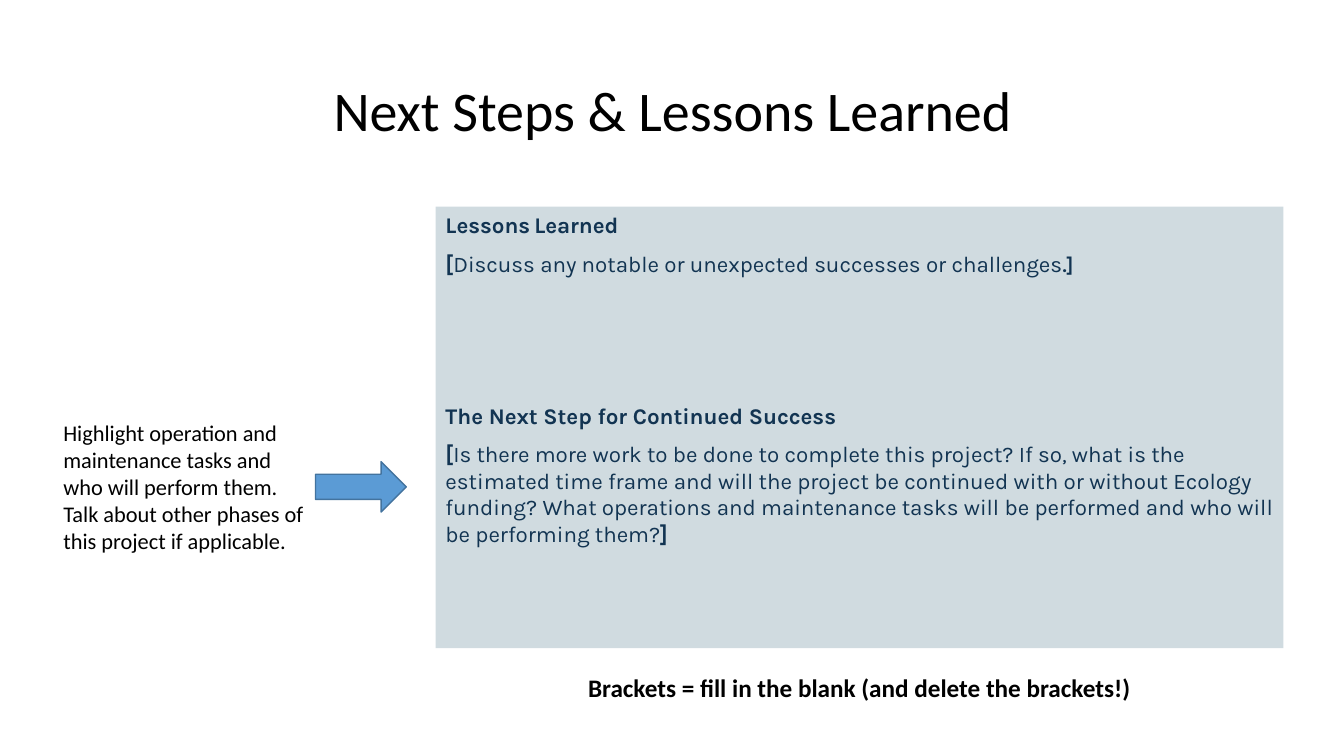
from pptx import Presentation
from pptx.dml.color import RGBColor
from pptx.enum.shapes import MSO_SHAPE as Shape
from pptx.enum.text import MSO_ANCHOR as Anchor, PP_ALIGN as Align
from pptx.util import Inches, Pt

BLACK, NAVY, PANEL = "000000", "123452", "D0DBE0"
ARROW_FILL, ARROW_LINE = "5B9BD5", "43739E"


def color(hex_code):
    return RGBColor.from_string(hex_code)


def write(para, text, size=16, font="Calibri", ink=BLACK, bold=False):
    span = para.add_run()
    span.text = text
    span.font.size = Pt(size)
    span.font.name = font
    span.font.bold = bold
    span.font.color.rgb = color(ink)


def place(shape, box):
    shape.left, shape.top, shape.width, shape.height = map(Inches, box)


def add_block(page, kind, box, fill, line=None):
    shape = page.shapes.add_shape(kind, *map(Inches, box))
    shape.shadow.inherit = False
    shape.fill.solid()
    shape.fill.fore_color.rgb = color(fill)
    if line:
        shape.line.color.rgb = color(line)
        shape.line.width = Pt(1)
    else:
        shape.line.fill.background()
    return shape


def add_title(page, box, text):
    title = page.shapes.title
    place(title, box)
    title.text_frame.vertical_anchor = Anchor.MIDDLE
    para = title.text_frame.paragraphs[0]
    para.alignment = Align.CENTER
    para.line_spacing = 0.9
    write(para, text, size=40)


def add_panel(page, box, paragraphs):
    """Each paragraph is (space before in points, [(text, format), ...])."""
    frame = add_block(page, Shape.RECTANGLE, box, PANEL).text_frame
    frame.word_wrap = True
    frame.vertical_anchor = Anchor.TOP
    for index, (gap, spans) in enumerate(paragraphs):
        para = frame.add_paragraph() if index else frame.paragraphs[0]
        para.alignment = Align.LEFT
        para.space_before, para.space_after = Pt(gap), Pt(8)
        for text, style in spans:
            write(para, text, font="Karla", ink=NAVY, **style)


def add_note(page, box, text, wrap=True, align=Align.LEFT, **style):
    frame = page.shapes.add_textbox(*map(Inches, box)).text_frame
    frame.word_wrap = wrap
    para = frame.paragraphs[0]
    para.alignment = align
    write(para, text, **style)


def build_lessons_slide(deck):
    page = deck.slides.add_slide(deck.slide_layouts[5])
    add_title(page, (0.92, 0.4, 11.5, 1.45), "Next Steps & Lessons Learned")

    # Panel with the two topics to fill in
    strong = {"bold": True}
    add_panel(page, (4.32, 2.05, 8.41, 4.38), [
        (0, [("Lessons", strong), (" ", {"size": 11, "bold": True}),
             ("Learned", strong)]),
        (0, [("[", strong),
             ("Discuss any notable or unexpected successes or challenges", {}),
             (".]", {"size": 14, "bold": True})]),
        (81.5, [("The Next Step for Continued Success", strong)]),
        (0, [("[", strong),
             ("Is there more work to be done to complete this project? "
              "If so, what is the estimated time frame and will the project "
              "be continued with or without Ecology funding? What operations "
              "and maintenance tasks will be performed and who will be "
              "performing them?", {}),
             ("]", strong)]),
    ])

    # Side hint with its arrow
    add_note(page, (0.53, 4.11, 2.68, 1.45),
             "Highlight operation and maintenance tasks and who will perform "
             "them. Talk about other phases of this project if applicable.")
    add_block(page, Shape.RIGHT_ARROW, (3.13, 4.58, 0.9, 0.5),
              ARROW_FILL, ARROW_LINE)

    # Legend below the panel
    add_note(page, (5.71, 6.62, 5.63, 0.4),
             "Brackets = fill in the blank (and delete the brackets!)",
             wrap=False, align=Align.CENTER, size=18, bold=True)


def main():
    deck = Presentation()
    deck.slide_width, deck.slide_height = Inches(13.33), Inches(7.5)
    build_lessons_slide(deck)
    deck.save("out.pptx")


if __name__ == "__main__":
    main()
